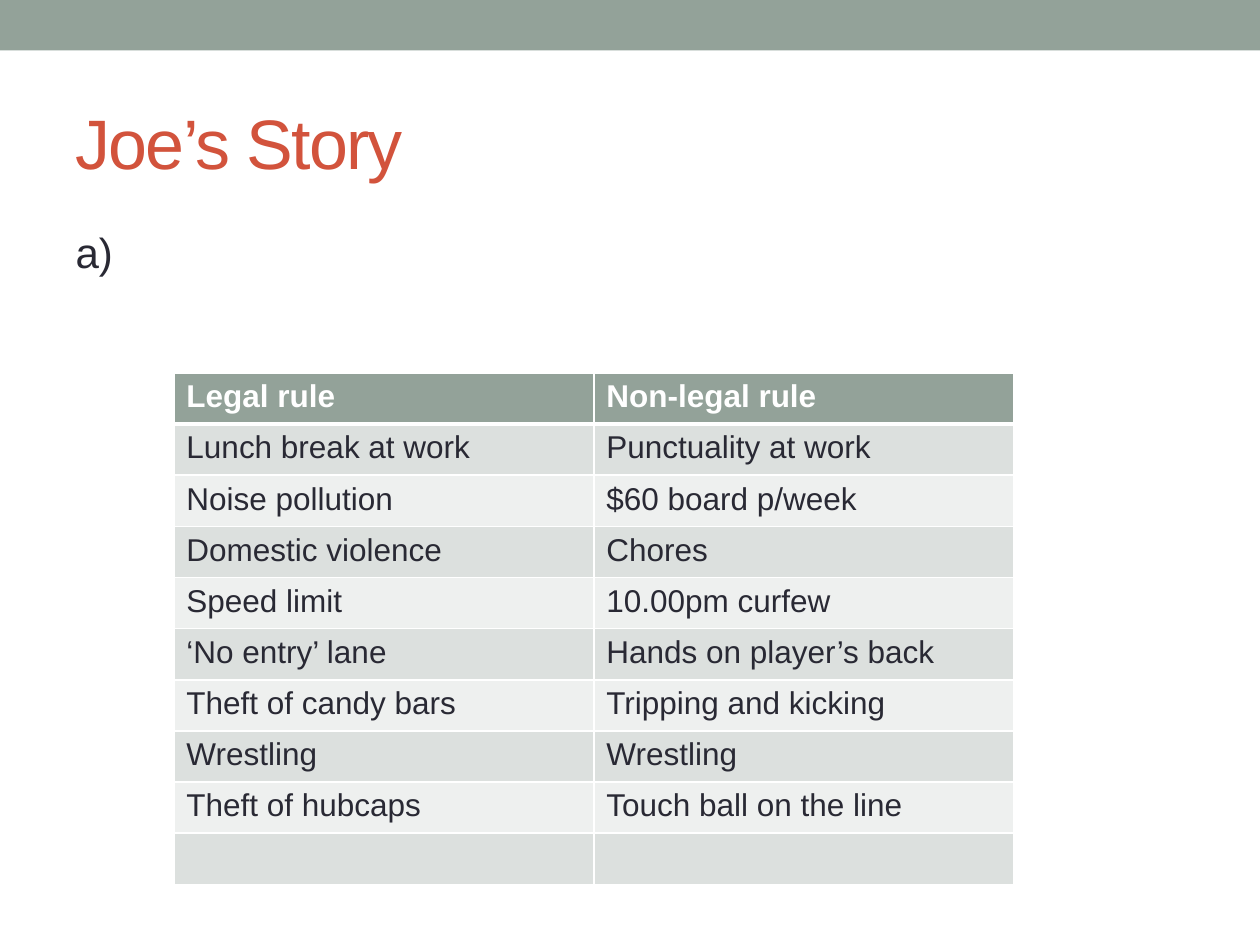
from lxml import etree
from pptx import Presentation
from pptx.dml.color import RGBColor
from pptx.enum.shapes import MSO_SHAPE
from pptx.enum.text import MSO_ANCHOR, MSO_AUTO_SIZE, PP_ALIGN
from pptx.oxml.ns import qn
from pptx.util import Inches, Pt

RECTANGLE = MSO_SHAPE.RECTANGLE
TOP, MIDDLE = MSO_ANCHOR.TOP, MSO_ANCHOR.MIDDLE
LEFT = PP_ALIGN.LEFT
NO_AUTOFIT = MSO_AUTO_SIZE.NONE

WIDTH, HEIGHT = 10, 7.5
MARGIN = 0.05 * WIDTH
SAGE, RUST, INK, WHITE = "93A299", "D2533C", "292934", "FFFFFF"
BANDS = ("DCE0DE", "EEF0EF")

RULES = [
    ("Legal rule", "Non-legal rule"),
    ("Lunch break at work", "Punctuality at work"),
    ("Noise pollution", "$60 board p/week"),
    ("Domestic violence", "Chores"),
    ("Speed limit", "10.00pm curfew"),
    ("‘No entry’ lane", "Hands on player’s back"),
    ("Theft of candy bars", "Tripping and kicking"),
    ("Wrestling", "Wrestling"),
    ("Theft of hubcaps", "Touch ball on the line"),
    ("", ""),
]


def color(hex_value):
    return RGBColor.from_string(hex_value)


def paint(part, hex_value):
    part.fill.solid()
    part.fill.fore_color.rgb = color(hex_value)


def write(frame, text, size, hex_value, bold=False):
    """Put one formatted line into a text frame."""
    paragraph = frame.paragraphs[0]
    paragraph.alignment = LEFT
    run = paragraph.add_run()
    run.text = text
    formats = {"name": "Arial", "size": Pt(size), "bold": bold}
    for key, value in formats.items():
        setattr(run.font, key, value)
    run.font.color.rgb = color(hex_value)
    return paragraph, run


def place(shape, box, anchor):
    for key, value in zip(("left", "top", "width", "height"), box):
        setattr(shape, key, Inches(value))
    frame = shape.text_frame
    formats = {"word_wrap": True, "auto_size": NO_AUTOFIT, "vertical_anchor": anchor}
    for key, value in formats.items():
        setattr(frame, key, value)
    return frame


def add_banner(slide, box):
    banner = slide.shapes.add_shape(RECTANGLE, *map(Inches, box))
    banner.shadow.inherit = False
    paint(banner, SAGE)
    banner.line.fill.background()


def fill_title(slide, box):
    frame = place(slide.shapes.title, box, MIDDLE)
    _, heading = write(frame, "Joe’s Story", 40, RUST)
    heading.font._element.set("spc", "-100")


def fill_body(slide, box):
    frame = place(slide.placeholders[1], box, TOP)
    item, _ = write(frame, "a)", 24, INK)
    item.space_before = Pt(0.2 * 24)
    # No bullet and no hanging indent
    properties = item._p.get_or_add_pPr()
    properties.set("marL", "0")
    properties.set("indent", "0")
    etree.SubElement(properties, qn("a:buNone"))


def add_borders(cell, top, bottom):
    properties = cell._tc.get_or_add_tcPr()
    for side, points in (("L", 1), ("R", 1), ("T", top), ("B", bottom)):
        line = etree.SubElement(properties, qn(f"a:ln{side}"), w=str(Pt(points)))
        fill = etree.SubElement(line, qn("a:solidFill"))
        etree.SubElement(fill, qn("a:srgbClr"), val=WHITE)


def add_rules_table(slide, box):
    left, top, width, height = map(Inches, box)
    table = slide.shapes.add_table(len(RULES), len(RULES[0]),
                                   left, top, width, height).table
    for row, rules in enumerate(RULES):
        header = row == 0
        for column, rule in enumerate(rules):
            cell = table.cell(row, column)
            # The thick rule lies between the header and the first row
            add_borders(cell, 3 if row == 1 else 1, 3 if header else 1)
            paint(cell, SAGE if header else BANDS[(row - 1) % 2])
            if rule:
                write(cell.text_frame, rule, 18, WHITE if header else INK, header)


def main():
    deck = Presentation()
    deck.slide_width, deck.slide_height = Inches(WIDTH), Inches(HEIGHT)
    slide = deck.slides.add_slide(deck.slide_layouts[1])
    content = WIDTH - 2 * MARGIN
    add_banner(slide, (0, 0, WIDTH, 0.4))
    fill_title(slide, (MARGIN, 0.58, content, 1.08))
    fill_body(slide, (MARGIN, 1.75, content, 5.33))
    add_rules_table(slide, (1.38, 2.96, WIDTH * 2 / 3, 4.06))
    deck.save("out.pptx")


if __name__ == "__main__":
    main()
